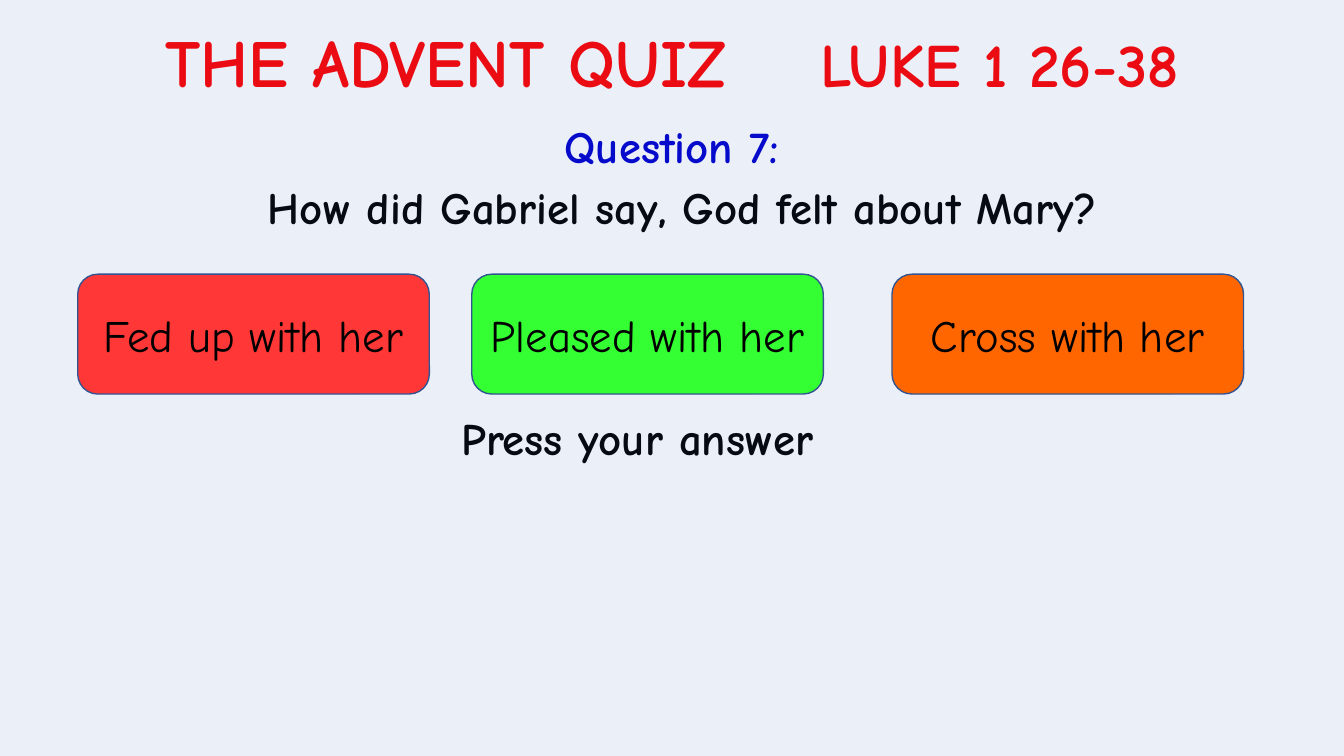
from lxml import etree
from pptx import Presentation
from pptx.dml.color import RGBColor
from pptx.enum.shapes import MSO_SHAPE
from pptx.enum.text import MSO_ANCHOR, PP_ALIGN
from pptx.oxml.ns import qn
from pptx.util import Cm, Pt

RECTANGLE = MSO_SHAPE.RECTANGLE
ROUNDED = MSO_SHAPE.ROUNDED_RECTANGLE
LEFT, CENTER = PP_ALIGN.LEFT, PP_ALIGN.CENTER
MIDDLE = MSO_ANCHOR.MIDDLE
FONT = "Comic Neue"
COLORS = {
    "title": "FF0000",
    "question": "0000CC",
    "text": "000000",
    "tint": "4472C4",
    "outline": "325491",
    "red": "FF3737",
    "green": "33FF33",
    "orange": "FF6600",
}
BUTTON_TOP, BUTTON_WIDTH, BUTTON_HEIGHT = 6.91, 8.86, 3.02
ANSWERS = [
    ("Fed up with her", 1.96, "red"),
    ("Pleased with her", 11.89, "green"),
    ("Cross with her", 22.48, "orange"),
]


def color(name):
    """Return the named colour."""
    return RGBColor.from_string(COLORS[name])


def add_run(paragraph, text, size=32, color_name="text", bold=True, tracking=0):
    """Append formatted text, with tracking in points."""
    run = paragraph.add_run()
    run.text = text
    run.font.name = FONT
    run.font.size = Pt(size)
    run.font.bold = bold
    run.font.color.rgb = color(color_name)
    if tracking:
        run.font._element.set("spc", str(tracking * 100))


def add_text_box(slide, left, top, width, height, align=CENTER, wrap=True):
    """Add a text box and return its first paragraph."""
    shape = slide.shapes.add_textbox(Cm(left), Cm(top), Cm(width), Cm(height))
    shape.text_frame.word_wrap = wrap
    paragraph = shape.text_frame.paragraphs[0]
    paragraph.alignment = align
    return paragraph


def add_panel(slide, kind, left, top, width, height, fill):
    """Add a filled and outlined preset shape."""
    shape = slide.shapes.add_shape(kind, Cm(left), Cm(top), Cm(width), Cm(height))
    shape.shadow.inherit = False
    shape.fill.solid()
    shape.fill.fore_color.rgb = color(fill)
    shape.line.color.rgb = color("outline")
    shape.line.width = Pt(1)
    return shape


def add_tint(slide):
    """Lay a translucent blue veil over the slide."""
    shape = add_panel(slide, RECTANGLE, -0.79, -1.14, 36.04, 22.17, "tint")
    fill_color = shape._element.spPr.find(qn("a:solidFill")).find(qn("a:srgbClr"))
    etree.SubElement(fill_color, qn("a:alpha")).set("val", "10000")


def add_answer(slide, text, left, fill):
    """Add one answer button."""
    shape = add_panel(slide, ROUNDED, left, BUTTON_TOP, BUTTON_WIDTH, BUTTON_HEIGHT, fill)
    shape.text_frame.word_wrap = True
    shape.text_frame.vertical_anchor = MIDDLE
    paragraph = shape.text_frame.paragraphs[0]
    paragraph.alignment = CENTER
    add_run(paragraph, text, bold=False)


def main():
    """Build the quiz slide."""
    presentation = Presentation()
    presentation.slide_width = Cm(33.87)
    presentation.slide_height = Cm(19.05)
    slide = presentation.slides.add_slide(presentation.slide_layouts[6])

    title = add_text_box(slide, 0.56, 0.38, 32.77, 2.31, wrap=False)
    add_run(title, "THE ADVENT QUIZ", size=48, color_name="title")
    add_run(title, " ", size=48, color_name="title", tracking=50)
    add_run(title, "LUKE 1 26-38", size=44, color_name="title")

    question = add_text_box(slide, 2.51, 4.5, 29.39, 3.02)
    question.line_spacing = Pt(36)
    question.space_before = Pt(10)
    add_run(question, "How did Gabriel say, God felt about Mary?")

    prompt = add_text_box(slide, 11.38, 10.39, 17.09, 1.83, align=LEFT)
    prompt.line_spacing = 0.9
    prompt.space_before = Pt(7.5)
    add_run(prompt, "Press your answer")

    number = add_text_box(slide, 11.33, 2.87, 11.2, 1.63)
    add_run(number, "Question 7:", color_name="question")

    add_tint(slide)
    for text, left, fill in ANSWERS:
        add_answer(slide, text, left, fill)
    presentation.save("out.pptx")


if __name__ == "__main__":
    main()
